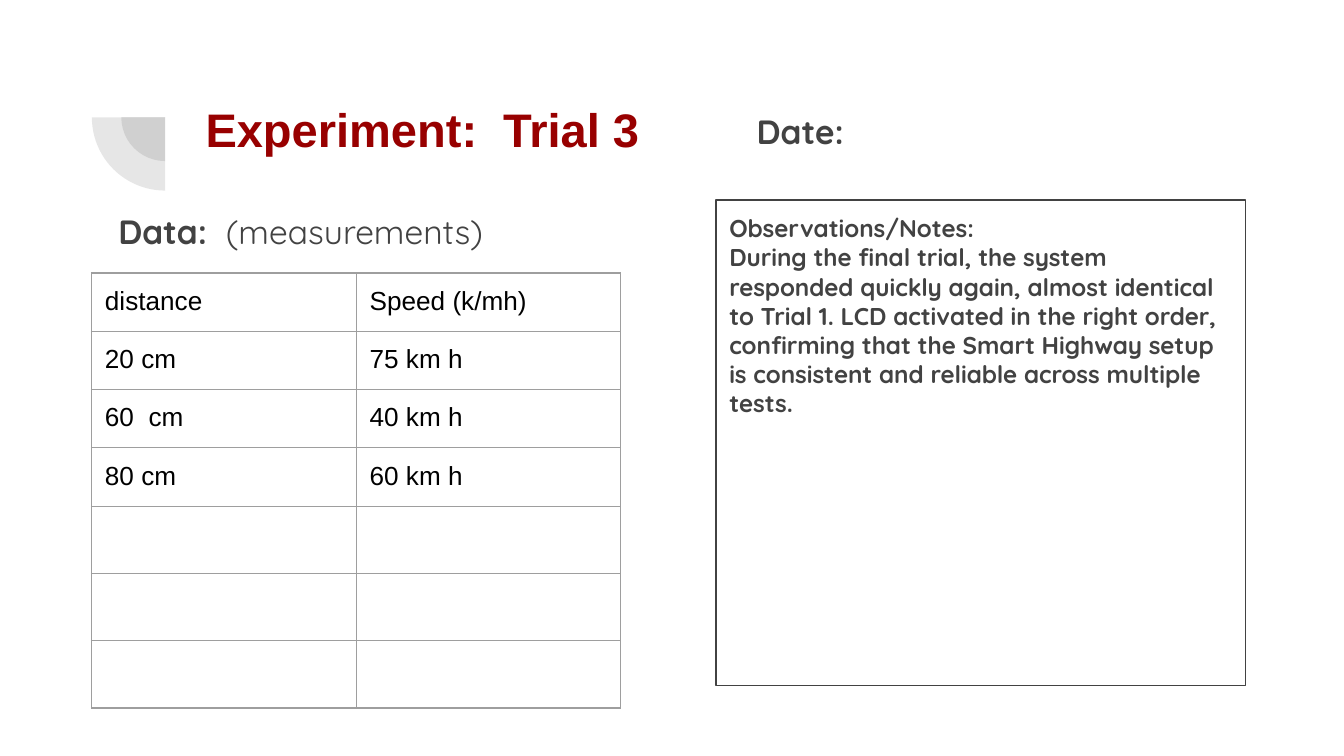
from lxml import etree
from pptx import Presentation
from pptx.dml.color import RGBColor
from pptx.enum.shapes import MSO_SHAPE
from pptx.enum.text import MSO_ANCHOR
from pptx.oxml.ns import qn
from pptx.util import Pt

PIE = MSO_SHAPE.PIE
RECTANGLE = MSO_SHAPE.RECTANGLE
TOP = MSO_ANCHOR.TOP

COLORS = {"title": "980000", "text": "424242", "cell": "000000", "border": "9E9E9E"}
INSET = Pt(7.2)
ROW_HEIGHT = 30
COLUMN_WIDTH = 141.8

TITLE = {"size": Pt(25.2), "name": "Arial", "bold": True, "color": "title"}
HEADING = {"size": Pt(18), "name": "Quicksand", "bold": True, "color": "text"}
HEADING_LIGHT = {**HEADING, "bold": False}
NOTES = {**HEADING, "size": Pt(13)}
CELL = {"size": Pt(14), "name": "Arial", "bold": False, "color": "cell"}

MEASUREMENTS = [
    ("distance", "Speed (k/mh)"),
    ("20 cm", "75 km h"),
    ("60  cm", "40 km h"),
    ("80 cm", "60 km h"),
    ("", ""),
    ("", ""),
    ("", ""),
]
OBSERVATIONS = (
    "During the final trial, the system responded quickly again, almost identical "
    "to Trial 1. LCD activated in the right order, confirming that the Smart Highway "
    "setup is consistent and reliable across multiple tests."
)


def rgb(name):
    return RGBColor.from_string(COLORS[name])


def add_run(paragraph, text, style):
    run = paragraph.add_run()
    run.text = text
    for attribute, value in style.items():
        if attribute == "color":
            run.font.color.rgb = rgb(value)
        else:
            setattr(run.font, attribute, value)


def fill_frame(frame, paragraphs):
    settings = {
        "word_wrap": True,
        "vertical_anchor": TOP,
        "margin_left": INSET,
        "margin_right": INSET,
        "margin_top": INSET,
        "margin_bottom": INSET,
    }
    for attribute, value in settings.items():
        setattr(frame, attribute, value)
    for index, runs in enumerate(paragraphs):
        paragraph = frame.add_paragraph() if index else frame.paragraphs[0]
        paragraph.alignment = 1
        for text, style in runs:
            add_run(paragraph, text, style)


def add_text(slide, box, runs):
    shape = slide.shapes.add_textbox(*map(Pt, box))
    fill_frame(shape.text_frame, [runs])


def add_quarter_pie(slide, center, radius):
    left, top = (value - radius for value in center)
    shape = slide.shapes.add_shape(PIE, Pt(left), Pt(top), Pt(2 * radius), Pt(2 * radius))
    shape.shadow.inherit = False
    shape.rotation = 270
    shape.adjustments[0] = 108
    shape.adjustments[1] = 162
    shape.fill.solid()
    shape.fill.fore_color.rgb = rgb("text")
    color = shape.fill._xPr.find(qn("a:solidFill"))[0]
    etree.SubElement(color, qn("a:alpha"), val="13000")
    shape.line.fill.background()


def add_notes_box(slide, box, paragraphs):
    shape = slide.shapes.add_shape(RECTANGLE, *map(Pt, box))
    shape.shadow.inherit = False
    shape.fill.background()
    shape.line.color.rgb = rgb("text")
    shape.line.width = Pt(0.75)
    fill_frame(shape.text_frame, paragraphs)


def set_borders(cell):
    properties = cell._tc.get_or_add_tcPr()
    for position, side in enumerate(("a:lnL", "a:lnR", "a:lnT", "a:lnB")):
        line = etree.Element(qn(side), w=str(Pt(0.75)))
        fill = etree.SubElement(line, qn("a:solidFill"))
        etree.SubElement(fill, qn("a:srgbClr"), val=COLORS["border"])
        properties.insert(position, line)


def add_measurement_table(slide, left, top, rows):
    column_count = len(rows[0])
    table = slide.shapes.add_table(
        len(rows), column_count, Pt(left), Pt(top),
        Pt(COLUMN_WIDTH * column_count), Pt(ROW_HEIGHT * len(rows)),
    ).table
    table.first_row = False
    table.horz_banding = False
    for row_index, row in enumerate(rows):
        for column_index, text in enumerate(row):
            cell = table.cell(row_index, column_index)
            cell.fill.background()
            set_borders(cell)
            for side in ("left", "right", "top", "bottom"):
                setattr(cell, f"margin_{side}", INSET)
            if text:
                add_run(cell.text_frame.paragraphs[0], text, CELL)


def main():
    presentation = Presentation()
    presentation.slide_width = Pt(720)
    presentation.slide_height = Pt(405)
    slide = presentation.slides.add_slide(presentation.slide_layouts[6])

    for radius in (23.5, 39.3):
        add_quarter_pie(slide, (88.5, 62.8), radius)
    add_text(slide, (103, 46.8, 553.7, 78.5), [("Experiment:  Trial 3", TITLE)])
    add_notes_box(
        slide, (383.6, 107.2, 283.5, 260),
        [[("Observations/Notes:", NOTES)], [(OBSERVATIONS, NOTES)]],
    )
    add_text(
        slide, (56.3, 106, 303.8, 32.4),
        [("Data:  ", HEADING), ("(measurements)", HEADING_LIGHT)],
    )
    add_measurement_table(slide, 49, 146.2, MEASUREMENTS)
    add_text(slide, (398.3, 52, 303.8, 32.4), [("Date:", HEADING)])

    presentation.save("out.pptx")


if __name__ == "__main__":
    main()
